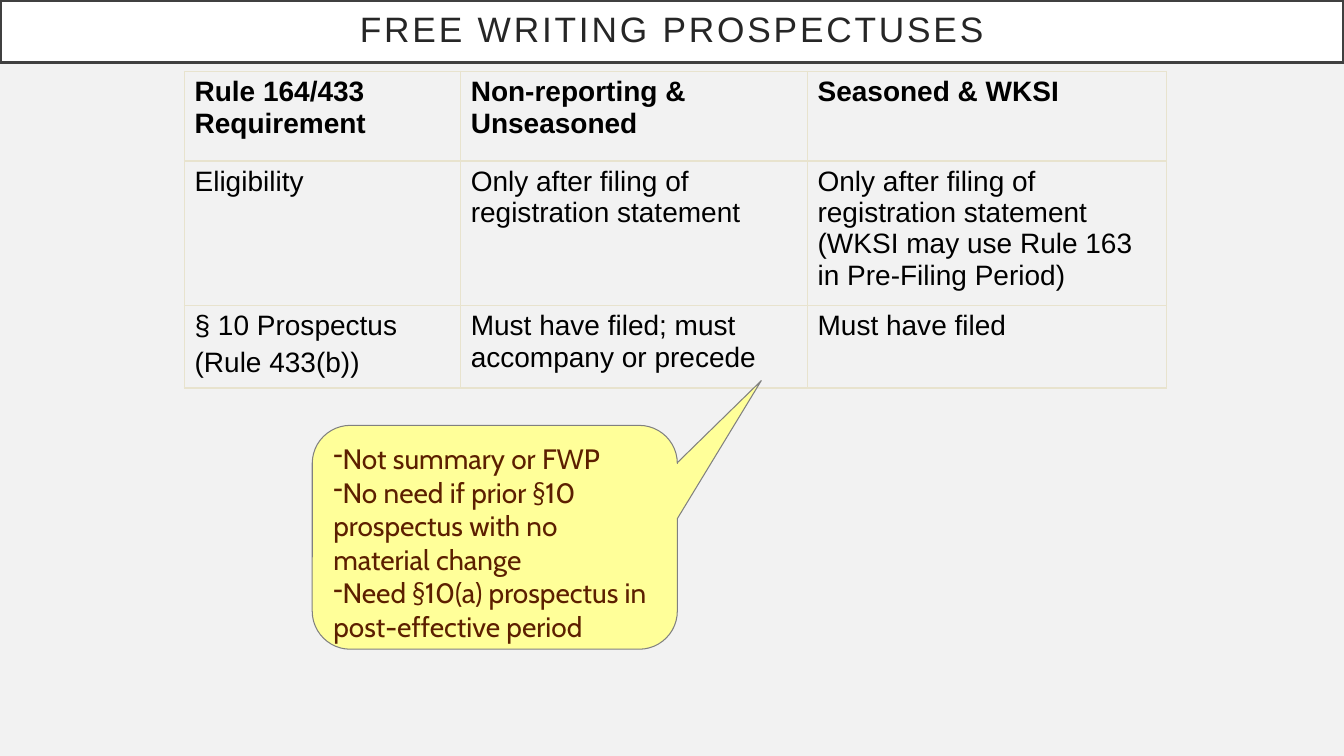
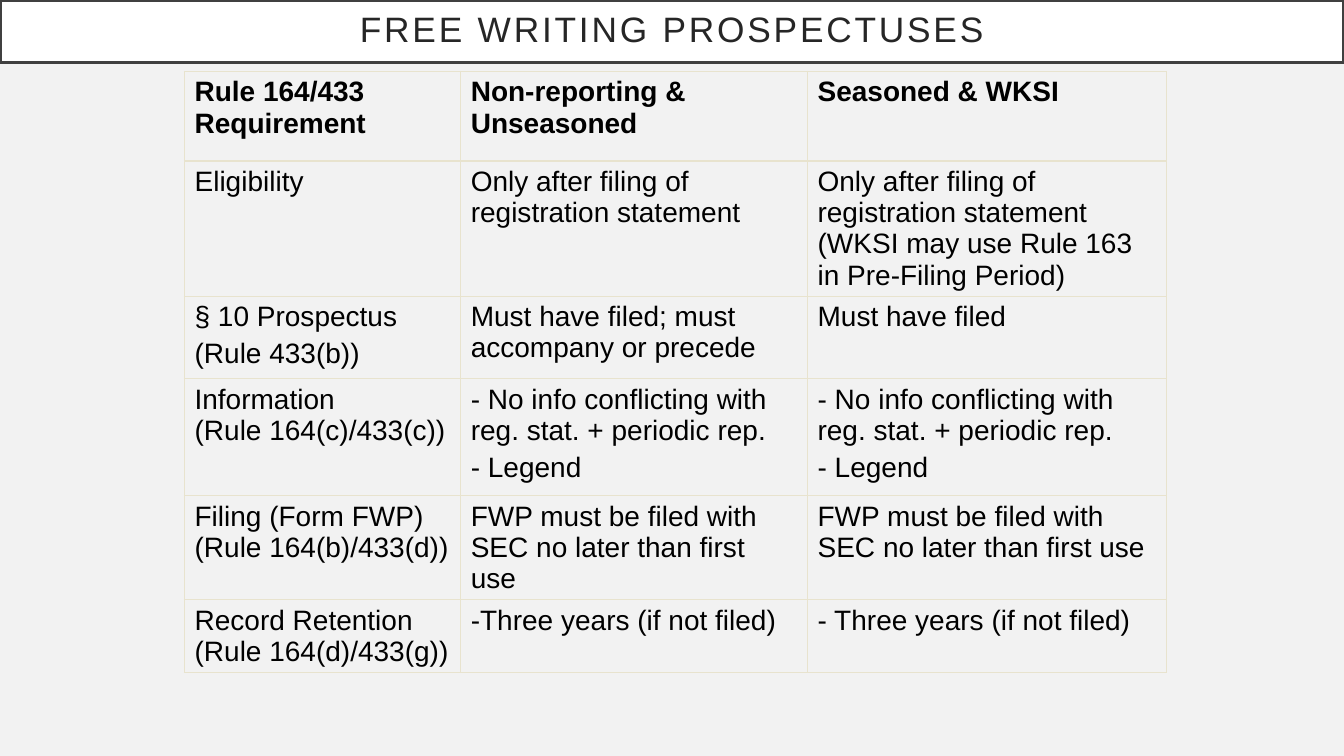
from dataclasses import dataclass

from lxml.etree import SubElement
from pptx import Presentation
from pptx.dml.color import RGBColor
from pptx.enum.shapes import MSO_SHAPE
from pptx.enum.text import MSO_ANCHOR, MSO_AUTO_SIZE, PP_ALIGN
from pptx.oxml import parse_xml
from pptx.oxml.ns import nsdecls, qn
from pptx.util import Cm, Pt

TITLE_ONLY = 5


@dataclass
class Requirement:
    cells: tuple
    height: float
    label_gap: float = 4


def color(hex_string):
    return RGBColor.from_string(hex_string)


def write(frame, text, font, size, fill, bold=False, align=PP_ALIGN.LEFT,
          gap=0, line_spacing=None, tracking=None, bullet=None):
    frame.word_wrap = True
    for index, line in enumerate(text.split("\n")):
        paragraph = frame.add_paragraph() if index else frame.paragraphs[0]
        paragraph.alignment = align
        paragraph.space_before = Pt(gap if index else 0)
        if line_spacing:
            paragraph.line_spacing = line_spacing
        if bullet:
            properties = paragraph._p.get_or_add_pPr()
            properties.set("marL", "0")
            properties.set("indent", "0")
            SubElement(properties, qn("a:buChar")).set("char", bullet)
        run = paragraph.add_run()
        run.text = line
        run.font.name = font
        run.font.size = Pt(size)
        run.font.bold = bold
        run.font.color.rgb = color(fill)
        if tracking:
            run._r.get_or_add_rPr().set("spc", str(tracking * 100))


class Deck:
    background = "F2F2F2"
    band_fill = "FFFFFF"
    band_line = "404040"
    title_color = "262626"
    table_color = "000000"
    border = "E8E3CE"
    note_fill = "FFFF99"
    note_line = "808080"
    note_color = "5C1F00"
    body_font = "Arial"
    note_font = "Cabin"
    body_size = 20
    columns = (6.96, 8.74, 9.04)

    def __init__(self):
        self.presentation = Presentation()
        self.presentation.slide_width = Cm(33.87)
        self.presentation.slide_height = Cm(19.05)
        fill = self.presentation.slide_master.background.fill
        fill.solid()
        fill.fore_color.rgb = color(self.background)
        self.slide = None

    def paint(self, shape, fill, line, width):
        shape.fill.solid()
        shape.fill.fore_color.rgb = color(fill)
        shape.line.color.rgb = color(line)
        shape.line.width = Pt(width)

    def add_slide(self, heading):
        layout = self.presentation.slide_layouts[TITLE_ONLY]
        self.slide = self.presentation.slides.add_slide(layout)
        band = self.slide.shapes.title
        band.left, band.top = Cm(0), Cm(0)
        band.width, band.height = self.presentation.slide_width, Cm(1.57)
        self.paint(band, self.band_fill, self.band_line, 2.5)
        frame = band.text_frame
        frame.auto_size = MSO_AUTO_SIZE.NONE
        frame.vertical_anchor = MSO_ANCHOR.MIDDLE
        frame.margin_left = frame.margin_right = Cm(0.5)
        frame.margin_top = frame.margin_bottom = Cm(0.5)
        write(frame, heading, self.body_font, 25.2, self.title_color,
              align=PP_ALIGN.CENTER, line_spacing=0.9, tracking=2)

    def outline_cell(self, cell):
        properties = cell._tc.get_or_add_tcPr()
        for index, side in enumerate(("lnL", "lnR", "lnT", "lnB")):
            properties.insert(index, parse_xml(
                f'<a:{side} {nsdecls("a")} w="{Pt(1)}"><a:solidFill>'
                f'<a:srgbClr val="{self.border}"/></a:solidFill></a:{side}>'))

    def add_requirements(self, requirements):
        height = sum(requirement.height for requirement in requirements)
        table = self.slide.shapes.add_table(
            len(requirements), len(self.columns), Cm(4.65), Cm(1.8),
            Cm(sum(self.columns)), Cm(height)).table
        table.first_row = table.horz_banding = False
        for column, width in zip(table.columns, self.columns):
            column.width = Cm(width)
        for row_index, requirement in enumerate(requirements):
            table.rows[row_index].height = Cm(requirement.height)
            for column_index, text in enumerate(requirement.cells):
                cell = table.cell(row_index, column_index)
                cell.fill.background()
                self.outline_cell(cell)
                write(cell.text_frame, text, self.body_font, self.body_size,
                      self.table_color, bold=row_index == 0,
                      gap=4 if column_index else requirement.label_gap)

    def add_note(self, text, left, top, width, height, pointer):
        note = self.slide.shapes.add_shape(
            MSO_SHAPE.ROUNDED_RECTANGULAR_CALLOUT,
            Cm(left), Cm(top), Cm(width), Cm(height))
        note.shadow.inherit = False
        self.paint(note, self.note_fill, self.note_line, 0.75)
        for index, value in enumerate(pointer):
            note.adjustments[index] = value
        note.text_frame.vertical_anchor = MSO_ANCHOR.TOP
        write(note.text_frame, text, self.note_font, self.body_size,
              self.note_color, bullet="-")


def main():
    heading = "FREE WRITING PROSPECTUSES"
    header = Requirement(("Rule 164/433 Requirement", "Non-reporting & Unseasoned",
                          "Seasoned & WKSI"), 2.26)
    eligibility = (
        "Eligibility",
        "Only after filing of registration statement",
        "Only after filing of registration statement "
        "(WKSI may use Rule 163 in Pre-Filing Period)")
    prospectus = Requirement(
        ("§ 10 Prospectus\n(Rule 433(b))",
         "Must have filed; must accompany or precede", "Must have filed"), 2.08)
    conflict = "- No info conflicting with reg. stat. + periodic rep.\n- Legend"
    filing = "FWP must be filed with SEC no later than first use"

    deck = Deck()
    deck.add_slide(heading)
    deck.add_requirements([header, Requirement(eligibility, 3.64), prospectus])
    deck.add_note(
        "Not summary or FWP\n"
        "No need if prior §10 prospectus with no material change\n"
        "Need §10(a) prospectus in post-effective period",
        7.87, 10.72, 9.2, 5.64, (0.73, -0.7, 0.17))

    deck.add_slide(heading)
    deck.add_requirements([
        header,
        Requirement(eligibility, 3.4),
        prospectus,
        Requirement(("Information\n(Rule 164(c)/433(c))", conflict, conflict),
                    2.95, label_gap=0),
        Requirement(("Filing (Form FWP)\n(Rule 164(b)/433(d))", filing, filing),
                    2.62, label_gap=0),
        Requirement(("Record Retention\n(Rule 164(d)/433(g))",
                     "-Three years (if not filed)",
                     "- Three years (if not filed)"), 1.8, label_gap=0),
    ])
    deck.presentation.save("out.pptx")


if __name__ == "__main__":
    main()
